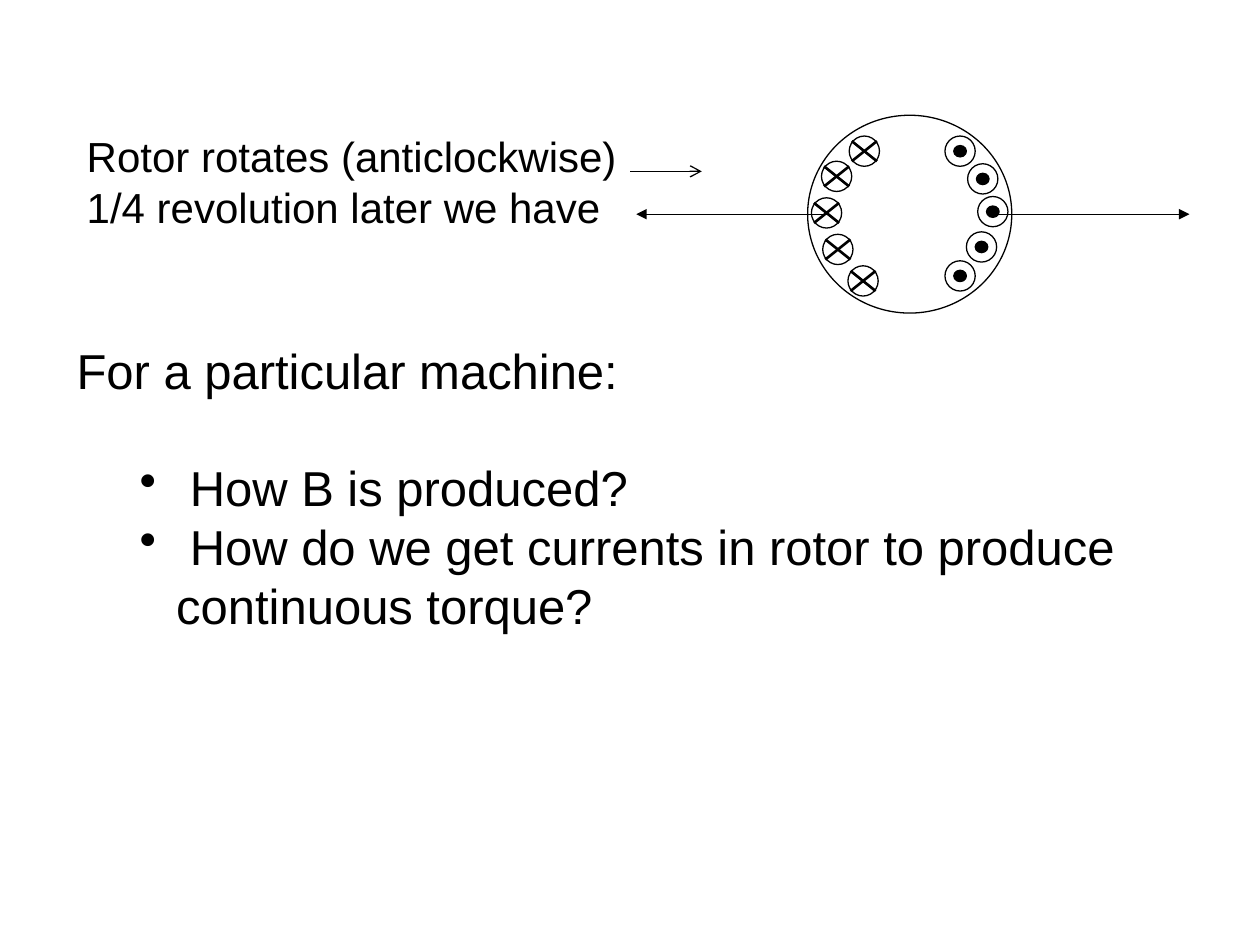
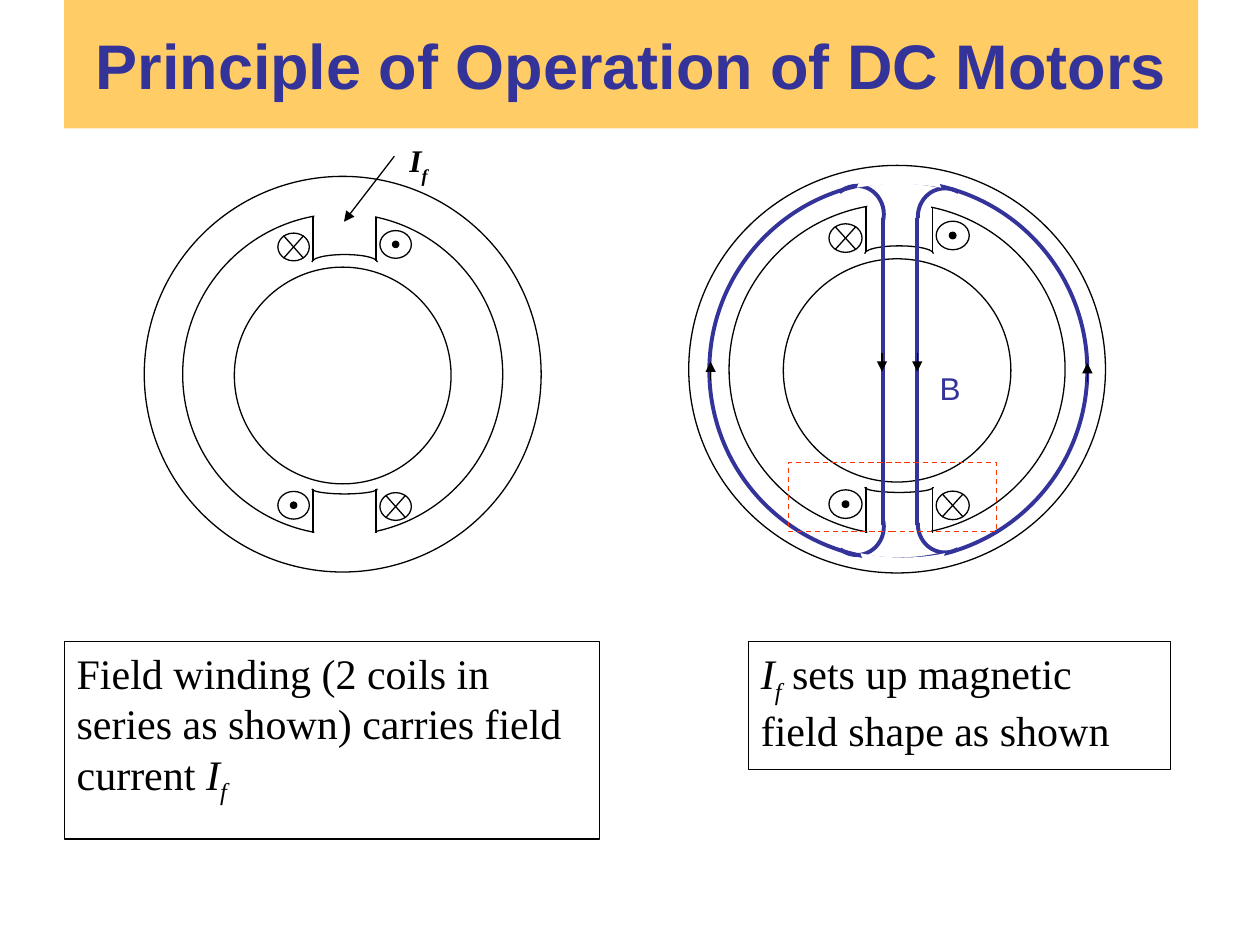
import dataclasses

import lxml.etree
import pptx
import pptx.dml.color
import pptx.enum.dml
import pptx.enum.shapes
import pptx.enum.text
import pptx.oxml.ns
import pptx.util

Inches = pptx.util.Inches
Pt = pptx.util.Pt
SHAPE = pptx.enum.shapes.MSO_SHAPE
ALIGN = pptx.enum.text.PP_ALIGN
ANCHOR = pptx.enum.text.MSO_ANCHOR


@dataclasses.dataclass(frozen=True)
class Theme:
    ink: str = "000000"
    paper: str = "FFFFFF"
    band: str = "FFCC66"
    blue: str = "333399"
    red: str = "FF3300"
    sans: str = "Arial"
    serif: str = "Times New Roman"
    title_size: int = 36
    question_size: int = 28
    body_size: int = 24
    label_size: int = 18
    thin: float = 0.75
    medium: float = 1.5
    thick: float = 2.25


THEME = Theme()


@dataclasses.dataclass(frozen=True)
class Frame:
    x: float
    y: float
    scale_x: float = 1
    scale_y: float = 1

    def point(self, x, y):
        return self.x + x * self.scale_x, self.y + y * self.scale_y

    def size(self, width, height):
        return width * self.scale_x, height * self.scale_y


@dataclasses.dataclass(frozen=True)
class CoilStyle:
    radius: tuple
    arm: tuple
    dot: tuple
    cross_width: float


ROTOR_COIL = CoilStyle((0.12, 0.12), (0.1, 0.08), (0.05, 0.045), THEME.medium)
FIELD_COIL = CoilStyle((0.125, 0.11), (0.08, 0.09), (0.025, 0.025), THEME.thin)


def rgb(color):
    return pptx.dml.color.RGBColor.from_string(color)


def add_block(page, kind, bounds, fill=None, line=None, width=THEME.thin):
    block = page.shapes.add_shape(kind, *map(Inches, bounds))
    block.shadow.inherit = False
    if fill:
        block.fill.solid()
        block.fill.fore_color.rgb = rgb(fill)
    else:
        block.fill.background()
    if line:
        block.line.color.rgb = rgb(line)
        block.line.width = Pt(width)
    else:
        block.line.fill.background()
    return block


def centred(center, radius):
    return (center[0] - radius[0], center[1] - radius[1],
            2 * radius[0], 2 * radius[1])


def add_ellipse(page, center, radius, fill=None, line=THEME.ink, width=THEME.thin):
    return add_block(page, SHAPE.OVAL, centred(center, radius), fill, line, width)


def add_arc(page, center, radius, start, end, line=THEME.ink, width=THEME.thin):
    arc = add_block(page, SHAPE.ARC, centred(center, radius), None, line, width)
    arc.adjustments[0] = start * 0.6
    arc.adjustments[1] = end * 0.6


def add_line(page, start, end, color=THEME.ink, width=THEME.thin, head=None):
    line = page.shapes.add_connector(
        pptx.enum.shapes.MSO_CONNECTOR.STRAIGHT, *map(Inches, (*start, *end)))
    line.line.color.rgb = rgb(color)
    line.line.width = Pt(width)
    if head:
        lxml.etree.SubElement(line.line._get_or_add_ln(),
                              pptx.oxml.ns.qn("a:tailEnd"), type=head)
    lxml.etree.SubElement(line._element.spPr, pptx.oxml.ns.qn("a:effectLst"))


def prepare_text(box, anchor=ANCHOR.TOP):
    frame = box.text_frame
    frame.word_wrap = True
    frame.vertical_anchor = anchor
    return frame


def style_paragraph(para, size, font=THEME.sans, color=THEME.ink, bold=False,
                    align=ALIGN.LEFT):
    para.alignment = align
    para.font.size = Pt(size)
    para.font.name = font
    para.font.color.rgb = rgb(color)
    para.font.bold = bold


def add_text(box, lines, size, anchor=ANCHOR.TOP, **style):
    frame = prepare_text(box, anchor)
    for index, text in enumerate(lines):
        para = frame.add_paragraph() if index else frame.paragraphs[0]
        para.add_run().text = text
        style_paragraph(para, size, **style)


def add_symbol(para, drop):
    for letter in "If":
        span = para.add_run()
        span.text = letter
        span.font.italic = True
    span._r.get_or_add_rPr().set("baseline", str(-drop * 1000))


def add_symbol_text(box, size, before="", after="", drop=25, bold=False):
    para = prepare_text(box).paragraphs[0]
    if before:
        para.add_run().text = before
    add_symbol(para, drop)
    if after:
        para.add_run().text = after
    style_paragraph(para, size, THEME.serif, bold=bold)


def add_bullet(frame, text, space_before=0):
    para = frame.add_paragraph()
    properties = para._p.get_or_add_pPr()
    properties.set("marL", str(Inches(0.79)))
    properties.set("indent", str(-Inches(0.29)))
    lxml.etree.SubElement(properties, pptx.oxml.ns.qn("a:buChar"), char="•")
    para.add_run().text = text
    para.space_before = Pt(space_before)
    style_paragraph(para, THEME.question_size)


def add_coil(page, frame, center, style, inward):
    x, y = center
    add_ellipse(page, frame.point(x, y), frame.size(*style.radius), THEME.paper)
    if inward:
        arm_x, arm_y = style.arm
        for slope in (1, -1):
            add_line(page, frame.point(x - arm_x, y - slope * arm_y),
                     frame.point(x + arm_x, y + slope * arm_y),
                     width=style.cross_width)
    else:
        add_ellipse(page, frame.point(x, y), frame.size(*style.dot), THEME.ink)


def add_rotor(page):
    frame = Frame(7.22, 1.7)
    add_ellipse(page, frame.point(0, 0), (0.81, 0.785), THEME.paper)
    inward_coils = [(-0.66, -0.01), (-0.58, -0.3), (-0.36, -0.5),
                    (-0.57, 0.28), (-0.37, 0.53)]
    outward_coils = [(0.66, -0.02), (0.57, 0.26), (0.4, 0.49),
                     (0.58, -0.28), (0.4, -0.5)]
    for coils, inward in ((inward_coils, True), (outward_coils, False)):
        for center in coils:
            add_coil(page, frame, center, ROTOR_COIL, inward)
    add_line(page, (6.56, 1.7), (5.05, 1.7), head="triangle")
    add_line(page, (7.9, 1.7), (9.44, 1.7), head="triangle")


def add_stator(page, frame):
    pole_x, pole_half = 0.015, 0.25
    add_ellipse(page, frame.point(0, 0.01), frame.size(0.86, 0.86), THEME.paper)
    poles = [(-1.25, -0.9, -0.89, 0.06, 180, 360, -1.24),
             (0.91, 1.26, 0.91, 0.04, 0, 180, 1.27)]
    for top, bottom, face, bulge, start, end, gap in poles:
        add_arc(page, frame.point(pole_x, face), frame.size(0.26, bulge), start, end)
        for side in (-pole_half, pole_half):
            add_line(page, frame.point(pole_x + side, top),
                     frame.point(pole_x + side, bottom))
    for x, y, inward in ((-0.39, -1.01, True), (0.42, -1.03, False),
                         (-0.39, 1.04, False), (0.42, 1.05, True)):
        add_coil(page, frame, (x, y), FIELD_COIL, inward)
    add_ellipse(page, frame.point(0, 0), frame.size(1.27, 1.275))
    for pole in poles:
        add_block(page, SHAPE.RECTANGLE,
                  centred(frame.point(pole_x, pole[-1]), frame.size(0.24, 0.05)),
                  THEME.paper)
    add_ellipse(page, frame.point(0, 0), frame.size(1.575, 1.57))


def add_flux(page):
    flux = {"line": THEME.blue, "width": THEME.thick}
    left_x, right_x = 7.01, 7.28
    add_ellipse(page, (7.13, 2.94), (1.5, 1.5), **flux)
    for center, start, end in (((6.8, 1.7), 232, 13), ((7.5, 1.72), 177, 299),
                               ((6.8, 4.18), 347, 126), ((7.5, 4.16), 63, 183)):
        add_arc(page, center, (0.215, 0.225), start, end, **flux)
    for x in (left_x, right_x):
        add_line(page, (x, 1.73), (x, 4.17), THEME.blue, THEME.thick)
    for bounds, turn in (((7.1, 4.12, 0.13, 0.67), 270),
                         ((7.08, 1.1, 0.11, 0.67), 90)):
        cover = add_block(page, SHAPE.MOON, bounds, THEME.paper)
        cover.adjustments[0] = 0.733
        cover.rotation = turn
    for x, start, end in ((8.63, 3.03, 2.88), (5.64, 3.02, 2.87),
                          (7, 2.8, 2.95), (right_x, 2.8, 2.95)):
        add_line(page, (x, start), (x, end), head="triangle")
    label = page.shapes.add_textbox(*map(Inches, (7.36, 2.88, 0.63, 0.4)))
    add_text(label, ["B"], THEME.label_size, color=THEME.blue)


def add_title(page, text):
    band = add_block(page, SHAPE.RECTANGLE, (0.51, 0, 9, 1.02), THEME.band)
    add_text(band, [text], THEME.title_size, ANCHOR.MIDDLE,
             color=THEME.blue, bold=True, align=ALIGN.CENTER)


def build_rotor_page(page):
    note = add_block(page, SHAPE.RECTANGLE, (0.59, 0.99, 4.96, 0.95), THEME.paper)
    add_text(note, ["Rotor rotates (anticlockwise)", "1/4 revolution later we have"],
             THEME.body_size)
    add_rotor(page)
    add_line(page, (5, 1.36), (5.57, 1.36), head="arrow")
    questions = add_block(page, SHAPE.RECTANGLE, (0.51, 2.65, 9.49, 2.99), THEME.paper)
    add_text(questions, ["For a particular machine:"], THEME.question_size)
    add_bullet(questions.text_frame, " How B is produced?", 33.5)
    add_bullet(questions.text_frame,
               " How do we get currents in rotor to produce continuous torque?")


def build_motor_page(page):
    add_title(page, "Principle of Operation of DC Motors")
    current = add_block(page, SHAPE.RECTANGLE, (3.15, 1.07, 0.67, 0.71), THEME.paper)
    add_symbol_text(current, THEME.label_size, drop=30, bold=True)
    add_stator(page, Frame(2.72, 2.97))
    add_line(page, (3.13, 1.24), (2.73, 1.76), head="triangle")
    winding = add_block(page, SHAPE.RECTANGLE, (0.51, 5.09, 4.25, 1.57),
                        THEME.paper, THEME.ink)
    add_symbol_text(winding, THEME.body_size, before="Field winding (2 coils in "
                    "series as shown) carries field current ")
    field = add_block(page, SHAPE.RECTANGLE, (5.94, 5.09, 3.35, 1.02),
                      THEME.paper, THEME.ink)
    add_symbol_text(field, THEME.body_size,
                    after=" sets up magnetic field shape as shown")
    add_stator(page, Frame(7.12, 2.93, 1.05, 1.03))
    add_flux(page)
    detail = add_block(page, SHAPE.RECTANGLE, (6.26, 3.67, 1.65, 0.55), line=THEME.red)
    detail.line.dash_style = pptx.enum.dml.MSO_LINE.DASH


def main():
    deck = pptx.Presentation()
    deck.slide_width, deck.slide_height = Inches(10), Inches(7.5)
    for build in (build_rotor_page, build_motor_page):
        build(deck.slides.add_slide(deck.slide_layouts[6]))
    deck.save("out.pptx")


if __name__ == "__main__":
    main()
